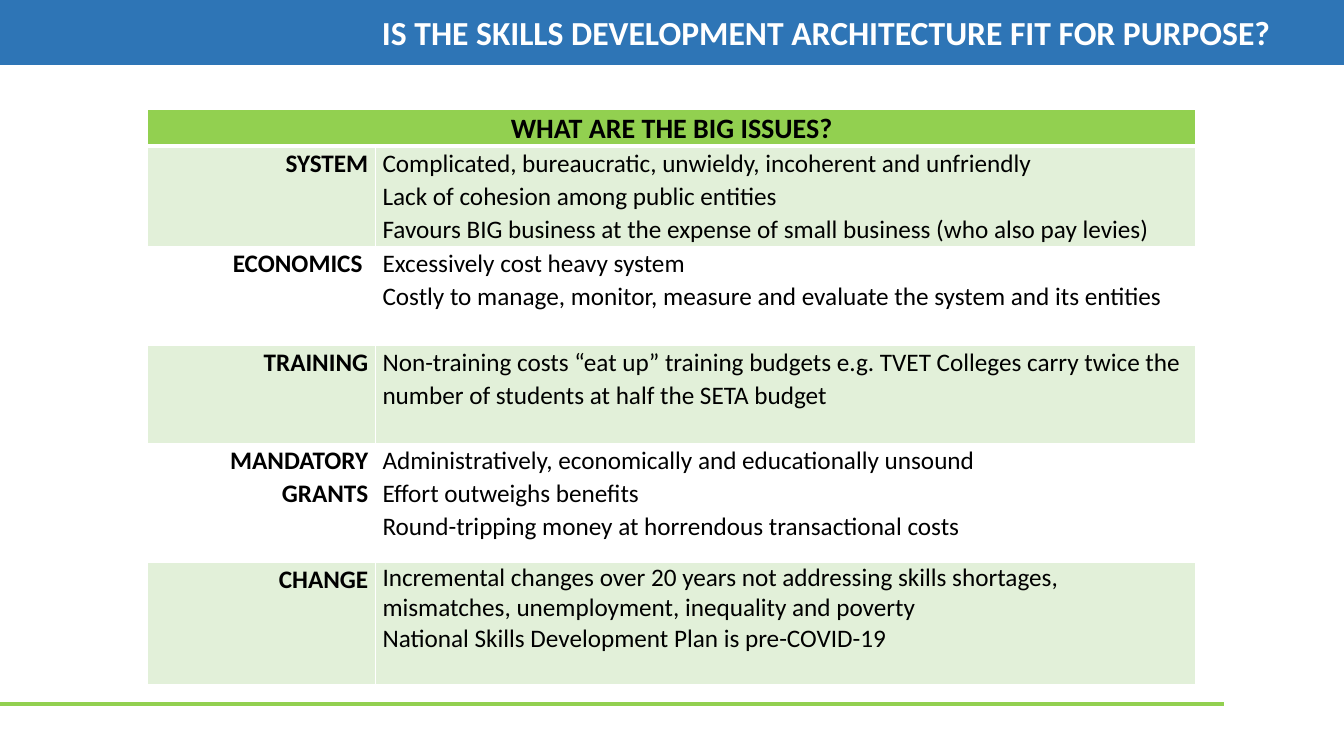
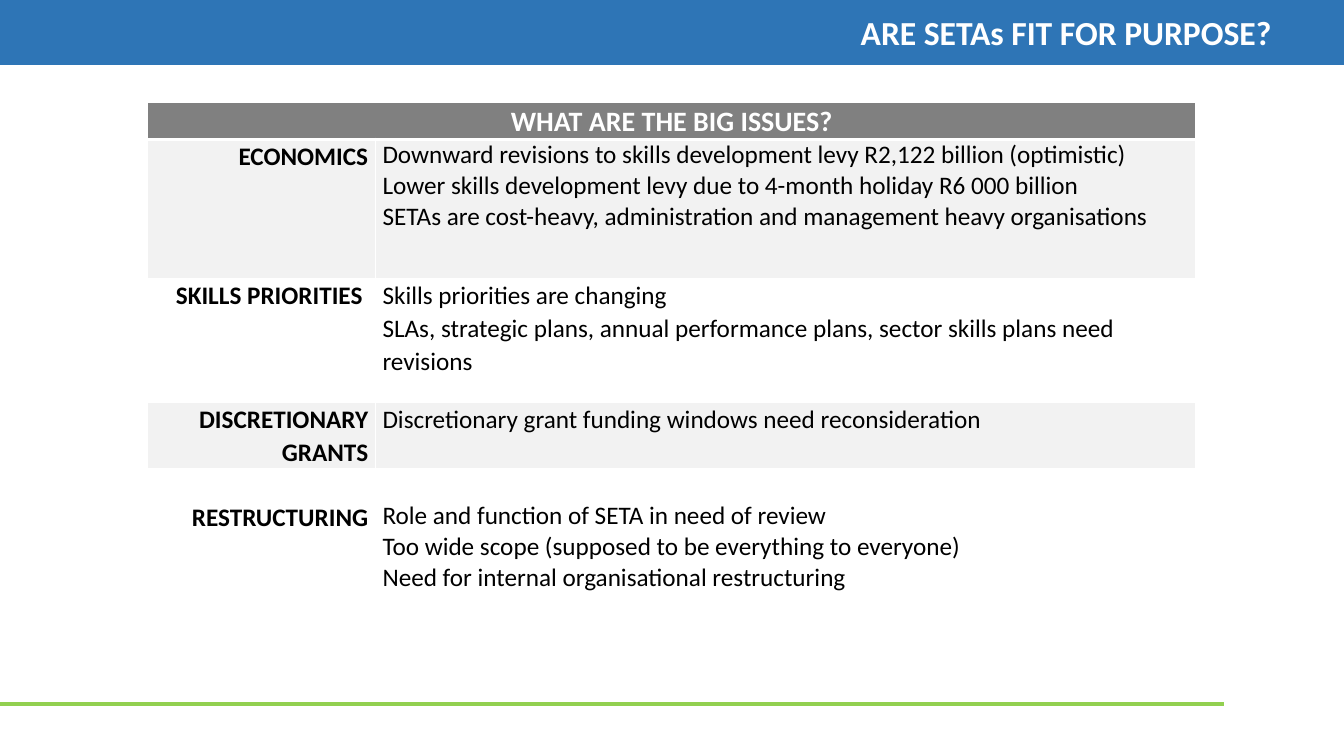
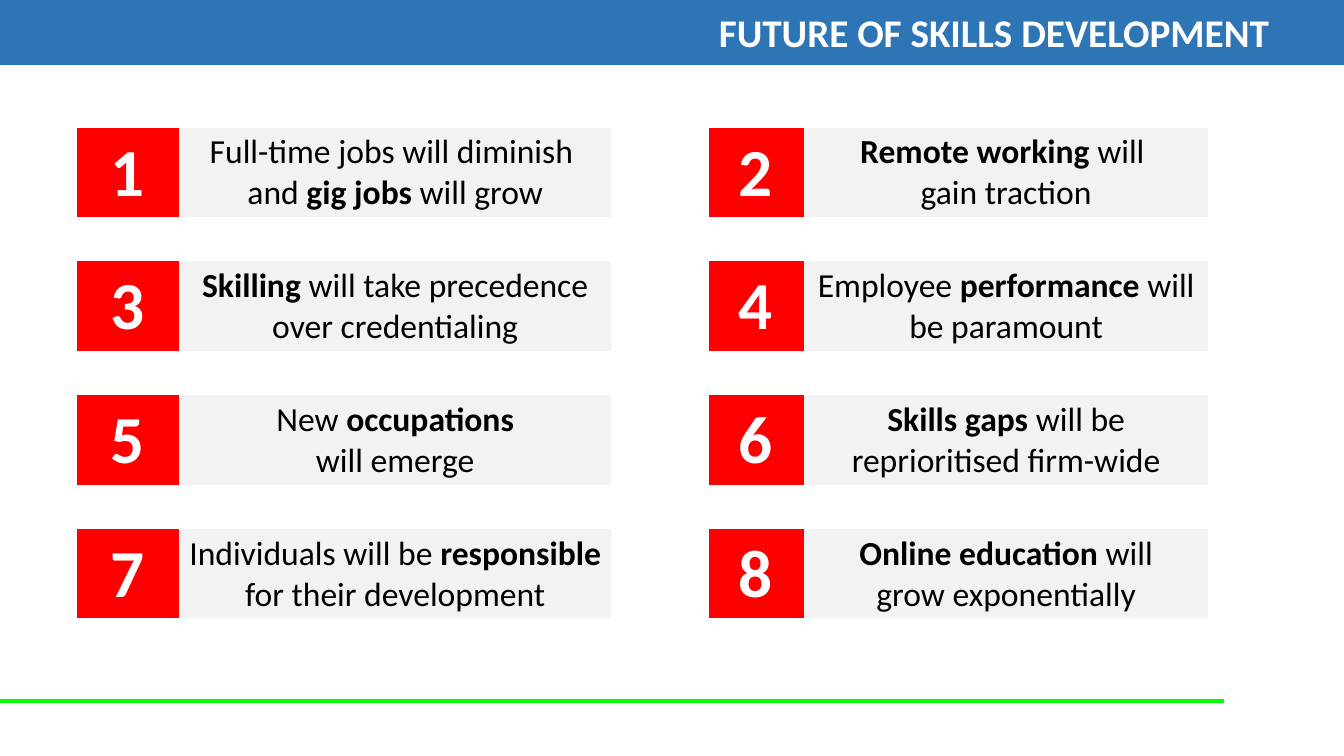
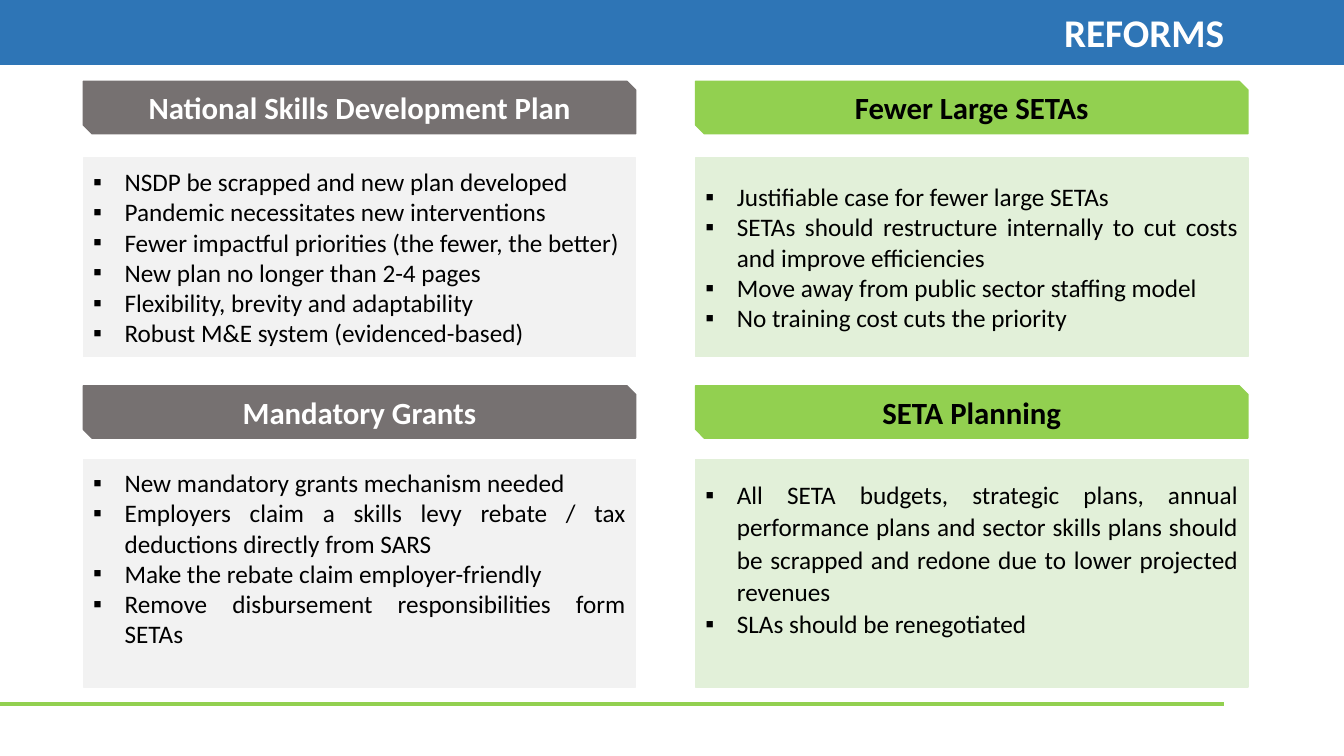
from lxml import etree
from pptx import Presentation
from pptx import util as u
from pptx.dml.color import RGBColor
from pptx.enum import shapes, text
from pptx.oxml import ns

FONT, BULLET_FONT = "Calibri", "Arial"
WHITE, BLACK, BLUE, RED = "FFFFFF", "000000", "2E75B6", "FF0000"
GREEN, BRIGHT_GREEN, PALE_GREEN = "92D050", "00FF00", "E2F0D9"
GREY, DARK_GREY, PALE_GREY = "808080", "767171", "F2F2F2"
LEFT, CENTER = text.PP_ALIGN.LEFT, text.PP_ALIGN.CENTER
RIGHT, JUSTIFY = text.PP_ALIGN.RIGHT, text.PP_ALIGN.JUSTIFY

SLIDE_WIDTH, SLIDE_HEIGHT = 33.87, 19.05
BAND_HEIGHT = 1.63
RULE_END = 30.84
LOOSE = 1.07

# Each issue row: height, label, lines, line spacing of the lines, top margin.
# A row without a label extends the lines of the row above.
ISSUES_HEADING = "WHAT ARE THE BIG ISSUES?"
ISSUES_LEFT, ISSUES_COLUMNS, ISSUES_HEADER_HEIGHT = 3.72, (5.74, 20.68), 0.92
ISSUE_SLIDES = [
    {"title": "IS THE SKILLS DEVELOPMENT ARCHITECTURE FIT FOR PURPOSE?",
     "right_inset": 1.85, "top": 2.76, "header": (GREEN, BLACK), "stripe": PALE_GREEN,
     "rows": [
         (2.52, "SYSTEM",
          ["Complicated, bureaucratic, unwieldy, incoherent and unfriendly",
           "Lack of cohesion among public entities",
           "Favours BIG business at the expense of small business (who also pay levies)"],
          LOOSE, 0),
         (2.51, "ECONOMICS ",
          ["Excessively cost heavy system",
           "Costly to manage, monitor, measure and evaluate the system and its entities"],
          LOOSE, 0),
         (2.47, "TRAINING",
          ["Non-training costs “eat up” training budgets e.g. TVET Colleges carry twice "
           "the number of students at half the SETA budget"],
          LOOSE, 0),
         (1.67, "MANDATORY GRANTS",
          ["Administratively, economically and educationally unsound",
           "Effort outweighs benefits",
           "Round-tripping money at horrendous transactional costs"],
          LOOSE, 0),
         (1.31, "", [], LOOSE, 0),
         (3.09, "CHANGE",
          ["Incremental changes over 20 years not addressing skills shortages, "
           "mismatches, unemployment, inequality and poverty",
           "National Skills Development Plan is pre-COVID-19"],
          1, 0),
     ]},
    {"title": "ARE SETAs FIT FOR PURPOSE?",
     "right_inset": 1.82, "top": 2.59, "header": (GREY, WHITE), "stripe": PALE_GREY,
     "rows": [
         (3.5, "ECONOMICS",
          ["Downward revisions to skills development levy R2,122 billion (optimistic)",
           "Lower skills development levy due to 4-month holiday R6 000 billion",
           "SETAs are cost-heavy, administration and management heavy organisations"],
          1, 0),
         (3.13, "SKILLS PRIORITIES ",
          ["Skills priorities are changing",
           "SLAs, strategic plans, annual performance plans, sector skills plans need revisions"],
          LOOSE, 0),
         (1.67, "DISCRETIONARY GRANTS",
          ["Discretionary grant funding windows need reconsideration"],
          LOOSE, 0),
         (3.2, "RESTRUCTURING",
          ["Role and function of SETA in need of review",
           "Too wide scope (supposed to be everything to everyone)",
           "Need for internal organisational restructuring"],
          1, 0.8),
     ]},
]

# Text between ** marks is bold
FUTURE_TITLE = "FUTURE OF SKILLS DEVELOPMENT"
TRENDS = [
    ["Full-time jobs will diminish ", "and **gig jobs** will grow"],
    ["**Remote working** will ", "gain traction"],
    ["**Skilling **will take precedence over credentialing"],
    ["Employee **performance** will be paramount"],
    ["New **occupations**", "will emerge"],
    ["**Skills gaps **will be reprioritised firm-wide"],
    ["Individuals will be **responsible** for their development"],
    ["**Online education** will", "grow exponentially"],
]
TREND_COLUMNS = [(1.92, (2.58, 10.92)), (17.84, (2.41, 10.21))]
TREND_TOP, TREND_STEP, TREND_HEIGHT = 3.2, 3.37, 2.27

REFORMS_TITLE = "REFORMS"
REFORMS = [
    ("National Skills Development Plan", 1,
     ["NSDP be scrapped and new plan developed",
      "Pandemic necessitates new interventions",
      "Fewer impactful priorities (the fewer, the better)",
      "New plan no longer than 2-4 pages",
      "Flexibility, brevity and adaptability",
      "Robust M&E system (evidenced-based)"]),
    ("Fewer Large SETAs", 1,
     ["Justifiable case for fewer large SETAs",
      "SETAs should restructure internally to cut costs and improve efficiencies",
      "Move away from public sector staffing model",
      "No training cost cuts the priority"]),
    ("Mandatory Grants", 1,
     ["New mandatory grants mechanism needed",
      "Employers claim a skills levy rebate / tax deductions directly from SARS",
      "Make the rebate claim employer-friendly",
      "Remove disbursement responsibilities form SETAs"]),
    ("SETA Planning", LOOSE,
     ["All SETA budgets, strategic plans, annual performance plans and sector skills "
      "plans should be scrapped and redone due to lower projected revenues",
      "SLAs should be renegotiated"]),
]
# Column: left, heading fill, heading text, body fill
REFORM_COLUMNS = [(2.1, DARK_GREY, WHITE, PALE_GREY), (17.53, GREEN, BLACK, PALE_GREEN)]
# Row: heading top, body top, body height, bottom inset of the body
REFORM_ROWS = [(2.05, 3.98, 5.0, 0.13), (9.72, 11.58, 5.73, 0.89)]
REFORM_WIDTH, REFORM_HEADING_HEIGHT = 13.92, 1.32
BULLET_INDENT = 0.79


def color(value):
    return RGBColor.from_string(value)


def set_bullet(paragraph):
    properties = paragraph._p.get_or_add_pPr()
    properties.set("marL", str(u.Cm(BULLET_INDENT)))
    properties.set("indent", str(-u.Cm(BULLET_INDENT)))
    etree.SubElement(properties, ns.qn("a:buFont")).set("typeface", BULLET_FONT)
    etree.SubElement(properties, ns.qn("a:buChar")).set("char", "▪")


def write(frame, lines, size, ink=BLACK, bold=False, align=LEFT, spacing=1, bullets=False):
    """Fill a text frame, one paragraph a line; ** switches bold on and off."""
    frame.word_wrap = True
    for number, line in enumerate(lines):
        paragraph = frame.add_paragraph() if number else frame.paragraphs[0]
        if bullets:
            set_bullet(paragraph)
        paragraph.alignment = align
        paragraph.line_spacing = spacing
        for index, piece in enumerate(line.split("**")):
            if piece:
                span = paragraph.add_run()
                span.text = piece
                span.font.name = FONT
                span.font.size = u.Pt(size)
                span.font.bold = bold or index % 2 == 1
                span.font.color.rgb = color(ink)


def add_box(page, kind, left, top, width, height, fill):
    box = page.shapes.add_shape(kind, u.Cm(left), u.Cm(top), u.Cm(width), u.Cm(height))
    box.shadow.inherit = False
    box.fill.solid()
    box.fill.fore_color.rgb = color(fill)
    box.line.color.rgb = color(fill)
    box.line.width = u.Pt(1)
    box.text_frame.vertical_anchor = text.MSO_ANCHOR.MIDDLE
    return box


def add_page(deck, title, size, right_inset, rule_top=17.74, rule_color=GREEN):
    """Add a slide with the bottom rule and the title band."""
    page = deck.slides.add_slide(deck.slide_layouts[6])
    rule = page.shapes.add_connector(shapes.MSO_CONNECTOR.STRAIGHT, u.Cm(0), u.Cm(rule_top),
                                     u.Cm(RULE_END), u.Cm(rule_top))
    rule.line.color.rgb = color(rule_color)
    rule.line.width = u.Pt(3)
    etree.SubElement(rule._element.spPr, ns.qn("a:effectLst"))
    band = add_box(page, shapes.MSO_SHAPE.RECTANGLE, 0, 0, SLIDE_WIDTH, BAND_HEIGHT, BLUE)
    band.text_frame.margin_right = u.Cm(right_inset)
    write(band.text_frame, [title], size, WHITE, True, RIGHT)
    return page


def add_table(page, left, top, widths, heights):
    table = page.shapes.add_table(len(heights), len(widths), u.Cm(left), u.Cm(top),
                                  u.Cm(sum(widths)), u.Cm(sum(heights))).table
    table.first_row = table.horz_banding = False
    for column, width in zip(table.columns, widths):
        column.width = u.Cm(width)
    for row, height in zip(table.rows, heights):
        row.height = u.Cm(height)
    return table


def style_cell(cell, fill, left=1, right=1, top=1, bottom=1):
    """Fill a cell and give it white borders, in points; 0 means none."""
    properties = cell._tc.get_or_add_tcPr()
    for tag, width in (("lnL", left), ("lnR", right), ("lnT", top), ("lnB", bottom)):
        border = etree.SubElement(properties, ns.qn("a:" + tag))
        border.set("w", str(u.Pt(width)))
        if width:
            solid = etree.SubElement(border, ns.qn("a:solidFill"))
            etree.SubElement(solid, ns.qn("a:srgbClr")).set("val", WHITE)
        else:
            etree.SubElement(border, ns.qn("a:noFill"))
    cell.fill.solid()
    cell.fill.fore_color.rgb = color(fill)


def set_margins(cell, top=0):
    cell.margin_left = cell.margin_right = u.Cm(0.18)
    cell.margin_top, cell.margin_bottom = u.Cm(top), u.Cm(0)


def add_issues_page(deck, issues):
    page = add_page(deck, issues["title"], 24, issues["right_inset"])
    heights = [ISSUES_HEADER_HEIGHT] + [row[0] for row in issues["rows"]]
    table = add_table(page, ISSUES_LEFT, issues["top"], ISSUES_COLUMNS, heights)
    fill, ink = issues["header"]
    header = table.cell(0, 0)
    header.merge(table.cell(0, 1))
    for column in range(2):
        style_cell(table.cell(0, column), fill, bottom=3)
    set_margins(header)
    write(header.text_frame, [ISSUES_HEADING], 20, ink, True, CENTER, LOOSE)
    striped = False
    for number, (_, label, lines, spacing, top) in enumerate(issues["rows"], 1):
        label_cell, lines_cell = table.cell(number, 0), table.cell(number, 1)
        if label:
            striped = not striped
        else:
            table.cell(number - 1, 1).merge(lines_cell)
        for cell in (label_cell, lines_cell):
            style_cell(cell, issues["stripe"] if striped else WHITE,
                       top=3 if number == 1 else 1)
            set_margins(cell, top)
        write(label_cell.text_frame, [label], 18, bold=True, align=RIGHT, spacing=LOOSE)
        write(lines_cell.text_frame, lines, 18, spacing=spacing)


def add_future_page(deck):
    page = add_page(deck, FUTURE_TITLE, 28, 1.89, rule_top=17.66, rule_color=BRIGHT_GREEN)
    for index, lines in enumerate(TRENDS):
        row, column = divmod(index, 2)
        left, widths = TREND_COLUMNS[column]
        table = add_table(page, left, TREND_TOP + row * TREND_STEP, widths, [TREND_HEIGHT])
        number_cell, trend_cell = table.cell(0, 0), table.cell(0, 1)
        style_cell(number_cell, RED, right=0, bottom=3)
        style_cell(trend_cell, PALE_GREY, left=0, bottom=3)
        write(number_cell.text_frame, [str(index + 1)], 48, WHITE, True, CENTER)
        write(trend_cell.text_frame, lines, 24, align=CENTER)


def add_reforms_page(deck):
    page = add_page(deck, REFORMS_TITLE, 28, 3.02)
    for index, (title, spacing, points) in enumerate(REFORMS):
        row, column = divmod(index, 2)
        left, heading_fill, ink, body_fill = REFORM_COLUMNS[column]
        heading_top, body_top, body_height, bottom_inset = REFORM_ROWS[row]
        heading = add_box(page, shapes.MSO_SHAPE.SNIP_2_DIAG_RECTANGLE, left, heading_top,
                          REFORM_WIDTH, REFORM_HEADING_HEIGHT, heading_fill)
        write(heading.text_frame, [title], 22, ink, True, CENTER)
        body = add_box(page, shapes.MSO_SHAPE.RECTANGLE, left, body_top,
                       REFORM_WIDTH, body_height, body_fill)
        body.text_frame.margin_bottom = u.Cm(bottom_inset)
        write(body.text_frame, points, 18, align=JUSTIFY, spacing=spacing, bullets=True)


def main():
    deck = Presentation()
    deck.slide_width, deck.slide_height = u.Cm(SLIDE_WIDTH), u.Cm(SLIDE_HEIGHT)
    for issues in ISSUE_SLIDES:
        add_issues_page(deck, issues)
    add_future_page(deck)
    add_reforms_page(deck)
    deck.save("out.pptx")


if __name__ == "__main__":
    main()
